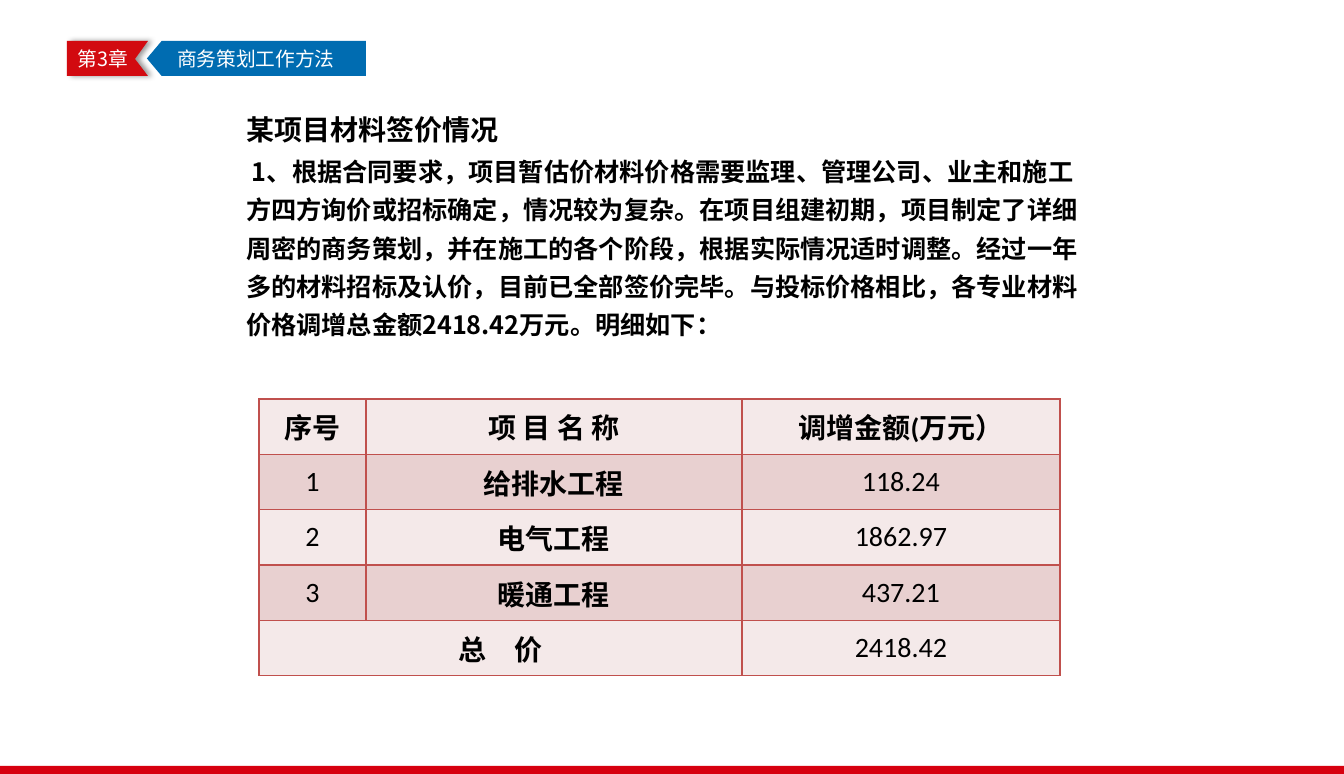
from lxml import etree
from pptx import Presentation
from pptx.dml.color import RGBColor
from pptx.enum.shapes import MSO_SHAPE
from pptx.enum.text import MSO_ANCHOR, MSO_AUTO_SIZE, PP_ALIGN
from pptx.oxml.ns import qn
from pptx.util import Emu, Pt

RECT, PENTAGON = MSO_SHAPE.RECTANGLE, MSO_SHAPE.PENTAGON
LEFT, CENTER = PP_ALIGN.LEFT, PP_ALIGN.CENTER
TOP, MIDDLE = MSO_ANCHOR.TOP, MSO_ANCHOR.MIDDLE
NO_FIT = MSO_AUTO_SIZE.NONE
PX = 914400 / 100.8
COLORS = {
    "bar": "D7000F", "tag": "D20A10", "chapter": "006CB1", "white": "FFFFFF",
    "text": "000000", "border": "C0504D", "light": "F4E9E9", "dark": "E8D0D0",
}
CJK, LATIN = "Noto Sans CJK SC", "Calibri"

BODY = (
    "1、根据合同要求，项目暂估价材料价格需要监理、管理公司、业主和施工"
    "方四方询价或招标确定，情况较为复杂。在项目组建初期，项目制定了详细"
    "周密的商务策划，并在施工的各个阶段，根据实际情况适时调整。经过一年"
    "多的材料招标及认价，目前已全部签价完毕。与投标价格相比，各专业材料"
    "价格调增总金额2418.42万元。明细如下："
)
ROWS = [
    ["序号", "项 目 名 称", "调增金额(万元）"],
    ["1", "给排水工程", "118.24"],
    ["2", "电气工程", "1862.97"],
    ["3", "暖通工程", "437.21"],
    ["总　价", "", "2418.42"],
]


def px(n):
    return Emu(round(n * PX))


def color(name):
    return RGBColor.from_string(COLORS[name])


class Slide:
    def __init__(self, prs):
        self.s = prs.slides.add_slide(prs.slide_layouts[1])

    def run(self, p, text, size, fill="text", bold=False, font=CJK):
        r = p.add_run()
        r.text = text
        r.font.name, r.font.size, r.font.bold = font, Pt(size), bold
        r.font.color.rgb = color(fill)
        etree.SubElement(r.font._element, qn("a:ea"), typeface=CJK)

    def frame(self, tf, anchor, left=0, right=0):
        tf.margin_left, tf.margin_right = px(left), px(right)
        tf.margin_top = tf.margin_bottom = 0
        tf.vertical_anchor, tf.word_wrap = anchor, True

    def paint(self, sp, fill):
        sp.fill.solid()
        sp.fill.fore_color.rgb = color(fill)
        sp.line.fill.background()
        sp.shadow.inherit = False
        return sp

    def shape(self, kind, x, y, w, h, fill):
        sp = self.s.shapes.add_shape(kind, px(x), px(y), px(w), px(h))
        return self.paint(sp, fill)

    def outline(self, points, fill):
        fb = self.s.shapes.build_freeform(*points[0], scale=PX)
        fb.add_line_segments(points[1:], close=True)
        return self.paint(fb.convert_to_shape(), fill)

    def shadow(self, sp):
        effects = sp._element.spPr.find(qn("a:effectLst"))
        outer = etree.SubElement(effects, qn("a:outerShdw"), blurRad=str(Pt(4)),
                                 dist=str(Pt(3)), dir="0", rotWithShape="0")
        black = etree.SubElement(outer, qn("a:srgbClr"), val=COLORS["text"])
        etree.SubElement(black, qn("a:alpha"), val="40000")

    def label(self, sp, text, align, left=0, right=0):
        self.frame(sp.text_frame, MIDDLE, left, right)
        p = sp.text_frame.paragraphs[0]
        p.alignment = align
        self.run(p, text, 14.1, "white")

    def placeholder(self, sp, box, text, size, anchor, first=0, pitch=None):
        sp.left, sp.top, sp.width, sp.height = map(px, box)
        tf = sp.text_frame
        self.frame(tf, anchor)
        tf.auto_size = NO_FIT
        p = tf.paragraphs[0]
        p.alignment = LEFT
        p.space_before = p.space_after = Pt(0)
        if pitch:
            p.line_spacing = Pt(pitch)
        pPr = p._p.get_or_add_pPr()
        pPr.set("marL", "0")
        pPr.set("indent", str(px(first)))
        etree.SubElement(pPr, qn("a:buNone"))
        self.run(p, text, size, bold=True)

    def cell(self, cell, text, fill, bold):
        tcPr = cell._tc.get_or_add_tcPr()
        for side in ("lnL", "lnR", "lnT", "lnB"):
            ln = etree.SubElement(tcPr, qn(f"a:{side}"), w=str(Pt(1)))
            solid = etree.SubElement(ln, qn("a:solidFill"))
            etree.SubElement(solid, qn("a:srgbClr"), val=COLORS["border"])
        cell.fill.solid()
        cell.fill.fore_color.rgb = color(fill)
        cell.margin_top = cell.margin_bottom = 0
        cell.vertical_anchor = MIDDLE
        p = cell.text_frame.paragraphs[0]
        p.alignment = CENTER
        if text:
            self.run(p, text, 20, bold=bold, font=LATIN)

    def table(self, x, y, h, widths, rows):
        table = self.s.shapes.add_table(len(rows), len(widths), px(x), px(y),
                                        px(sum(widths)), px(h)).table
        for column, width in zip(table.columns, widths):
            column.width = px(width)
        for i, row in enumerate(rows):
            for j, text in enumerate(row):
                bold = i == 0 or j == 1 or (i == len(rows) - 1 and j == 0)
                self.cell(table.cell(i, j), text, ("light", "dark")[i % 2], bold)
        last = len(rows) - 1
        table.cell(last, 0).merge(table.cell(last, 1))


def main():
    prs = Presentation()
    prs.slide_width, prs.slide_height = px(1344), px(774)
    slide = Slide(prs)
    slide.shape(RECT, 0, 766, 1344, 8, "bar")

    tag = slide.outline([(67, 41), (148, 41), (135, 59), (148, 76), (67, 76)], "tag")
    slide.shadow(tag)
    slide.label(tag, "第3章", CENTER, right=9)

    chapter = slide.shape(PENTAGON, 147, 41, 219, 35, "chapter")
    chapter.adjustments[0] = 0.42
    chapter._element.spPr.find(qn("a:xfrm")).set("flipH", "1")
    slide.label(chapter, "商务策划工作方法", LEFT, left=23)

    title, body = slide.s.placeholders
    slide.placeholder(title, (246, 109, 844, 40), "某项目材料签价情况", 20, MIDDLE)
    slide.placeholder(body, (246, 148, 844, 200), BODY, 18, TOP, first=6, pitch=27.4)

    slide.table(259, 399, 277, [107, 376, 318], ROWS)
    prs.save("out.pptx")


if __name__ == "__main__":
    main()
